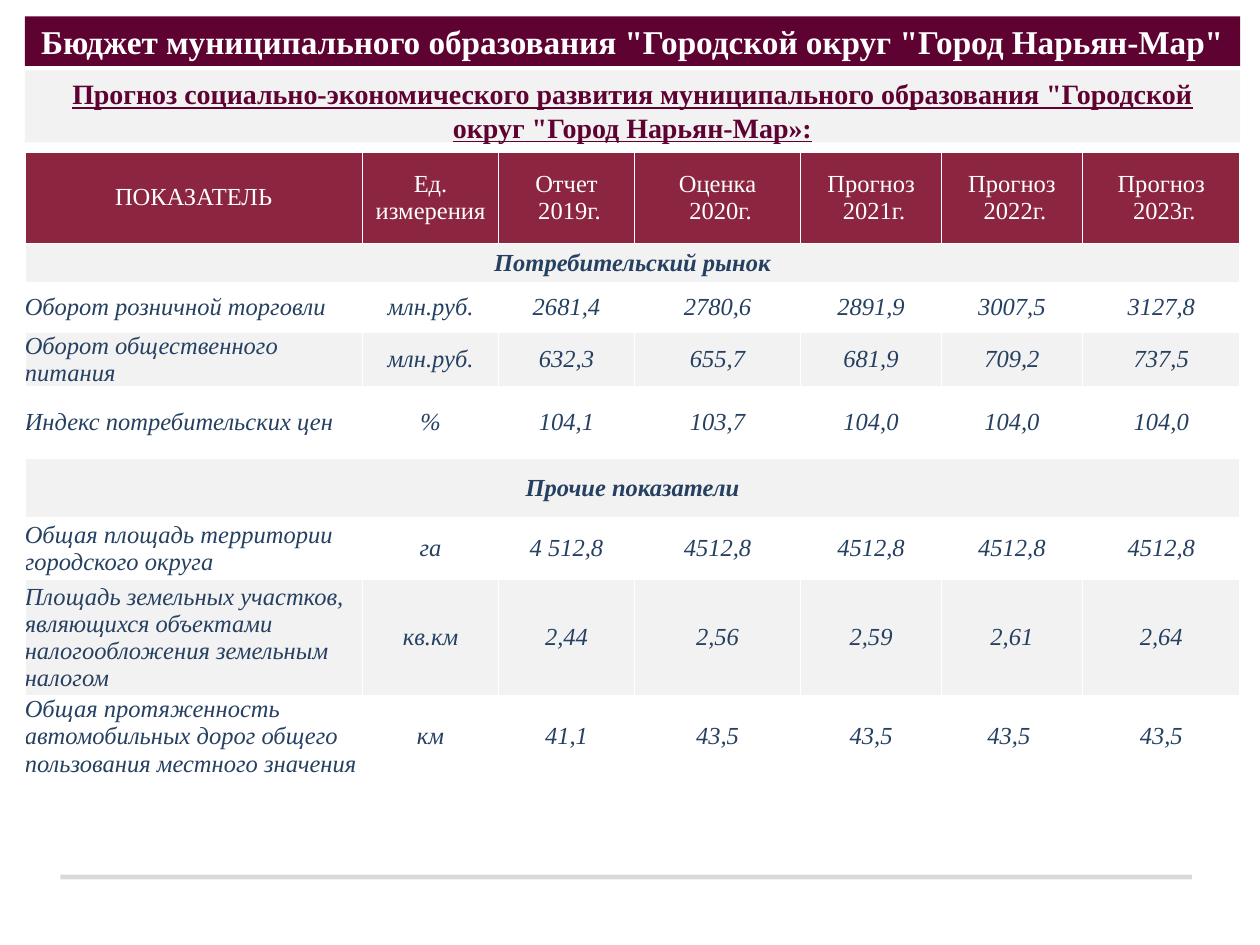
import pptx
import pptx.util
import pptx.oxml
import pptx.oxml.ns
import pptx.dml.color
import pptx.enum.shapes
import pptx.enum.text

Cm = pptx.util.Cm
Pt = pptx.util.Pt
Align = pptx.enum.text.PP_ALIGN
Anchor = pptx.enum.text.MSO_ANCHOR

HUES = {"plum": "5E0231", "wine": "8C2540", "pale": "F2F2F2",
        "white": "FFFFFF", "navy": "254061", "grey": "D9D9D9"}

COLS = [6.81, 2.74, 2.74, 3.35, 2.84, 2.84, 3.18]
ROWS = [1.85, 0.79, 1, 1.1, 1.43, 1.21, 1.24, 2.35, 1.63]
DATA = [
    ["ПОКАЗАТЕЛЬ", "Ед. измерения", "Отчет\n 2019г.", "Оценка\n 2020г.",
     "Прогноз\n 2021г.", "Прогноз\n 2022г.", "Прогноз\n 2023г."],
    ["Потребительский рынок"],
    ["Оборот розничной торговли", "млн.руб.",
     "2681,4", "2780,6", "2891,9", "3007,5", "3127,8"],
    ["Оборот общественного питания", "млн.руб.",
     "632,3", "655,7", "681,9", "709,2", "737,5"],
    ["Индекс потребительских цен", "%",
     "104,1", "103,7", "104,0", "104,0", "104,0"],
    ["Прочие показатели"],
    ["Общая площадь территории городского округа", "га",
     "4 512,8", "4512,8", "4512,8", "4512,8", "4512,8"],
    ["Площадь земельных участков, являющихся объектами "
     "налогообложения земельным налогом", "кв.км",
     "2,44", "2,56", "2,59", "2,61", "2,64"],
    ["Общая протяженность автомобильных дорог общего "
     "пользования местного значения", "км",
     "41,1", "43,5", "43,5", "43,5 ", "43,5"],
]


class Deck:
    face = "Times New Roman"
    plain = "{2D5ABB26-0587-4C30-8999-92F81FD0307C}"

    def __init__(self):
        self.pres = pptx.Presentation()
        self.pres.slide_width = Cm(25.4)
        self.pres.slide_height = Cm(19.05)
        self.slide = self.pres.slides.add_slide(self.pres.slide_layouts[0])

    def paint(self, item, hue):
        item.fill.solid()
        item.fill.fore_color.rgb = pptx.dml.color.RGBColor.from_string(HUES[hue])

    def letter(self, frame, text, size, hue, align=Align.CENTER,
               bold=False, slant=False, under=False):
        frame.text = text
        for para in frame.paragraphs:
            para.alignment = align
            font = para.font
            font.name, font.size = self.face, Pt(size)
            font.bold, font.italic, font.underline = bold, slant, under
            font.color.rgb = pptx.dml.color.RGBColor.from_string(HUES[hue])

    def head(self, index, box, text, size, hue, back, anchor, under=False):
        item = self.slide.placeholders[index]
        item.left, item.top, item.width, item.height = map(Cm, box)
        self.paint(item, back)
        frame = item.text_frame
        frame.word_wrap = True
        frame.auto_size = pptx.enum.text.MSO_AUTO_SIZE.NONE
        frame.vertical_anchor = anchor
        self.letter(frame, text, size, hue, bold=True, under=under)

    def edge(self, cell):
        props = cell._tc.get_or_add_tcPr()
        for spot, side in enumerate(("lnL", "lnR", "lnT", "lnB")):
            props.insert(spot, pptx.oxml.parse_xml(
                f'<a:{side} {pptx.oxml.ns.nsdecls("a")} w="12700"><a:solidFill>'
                f'<a:srgbClr val="{HUES["white"]}"/></a:solidFill></a:{side}>'))

    def grid(self, left, top, cols, rows, data):
        item = self.slide.shapes.add_table(
            len(rows), len(cols), Cm(left), Cm(top), Cm(sum(cols)), Cm(sum(rows)))
        table = item.table
        table.first_row = table.horz_banding = False
        table._tbl.tblPr.find(pptx.oxml.ns.qn("a:tableStyleId")).text = self.plain
        for col, width in zip(table.columns, cols):
            col.width = Cm(width)
        for r, (row, height) in enumerate(zip(table.rows, rows)):
            row.height = Cm(height)
            band = len(data[r]) == 1
            back = "wine" if r == 0 else "pale" if r % 2 else "white"
            for c, cell in enumerate(row.cells):
                self.paint(cell, back)
                self.edge(cell)
                cell.vertical_anchor = Anchor.MIDDLE
                cell.margin_left = cell.margin_right = Cm(0.25 if r == c == 0 else 0)
                cell.margin_top = cell.margin_bottom = Cm(0 if r else 0.13)
                if c < len(data[r]):
                    start = r > 0 and c == 0 and not band
                    self.letter(cell.text_frame, data[r][c], 14,
                                "navy" if r else "white",
                                Align.LEFT if start else Align.CENTER,
                                bold=band, slant=r > 0)
            if band:
                table.cell(r, 0).merge(table.cell(r, len(cols) - 1))

    def bar(self, box, hue):
        item = self.slide.shapes.add_shape(
            pptx.enum.shapes.MSO_SHAPE.RECTANGLE, *map(Cm, box))
        item.shadow.inherit = False
        self.paint(item, hue)
        item.line.fill.background()

    def save(self):
        self.pres.save("out.pptx")


def main():
    deck = Deck()
    deck.head(0, (0.5, 0.33, 24.5, 1),
              'Бюджет муниципального образования "Городской округ "Город Нарьян-Мар"',
              19, "white", "plum", Anchor.MIDDLE)
    deck.head(1, (0.5, 1.42, 24.5, 1.45),
              'Прогноз социально-экономического развития муниципального '
              'образования "Городской округ "Город Нарьян-Мар»:',
              16, "plum", "pale", Anchor.TOP, under=True)
    deck.grid(0.5, 3.06, COLS, ROWS, DATA)
    deck.bar((1.22, 17.63, 22.81, 0.1), "grey")
    deck.save()


if __name__ == "__main__":
    main()
